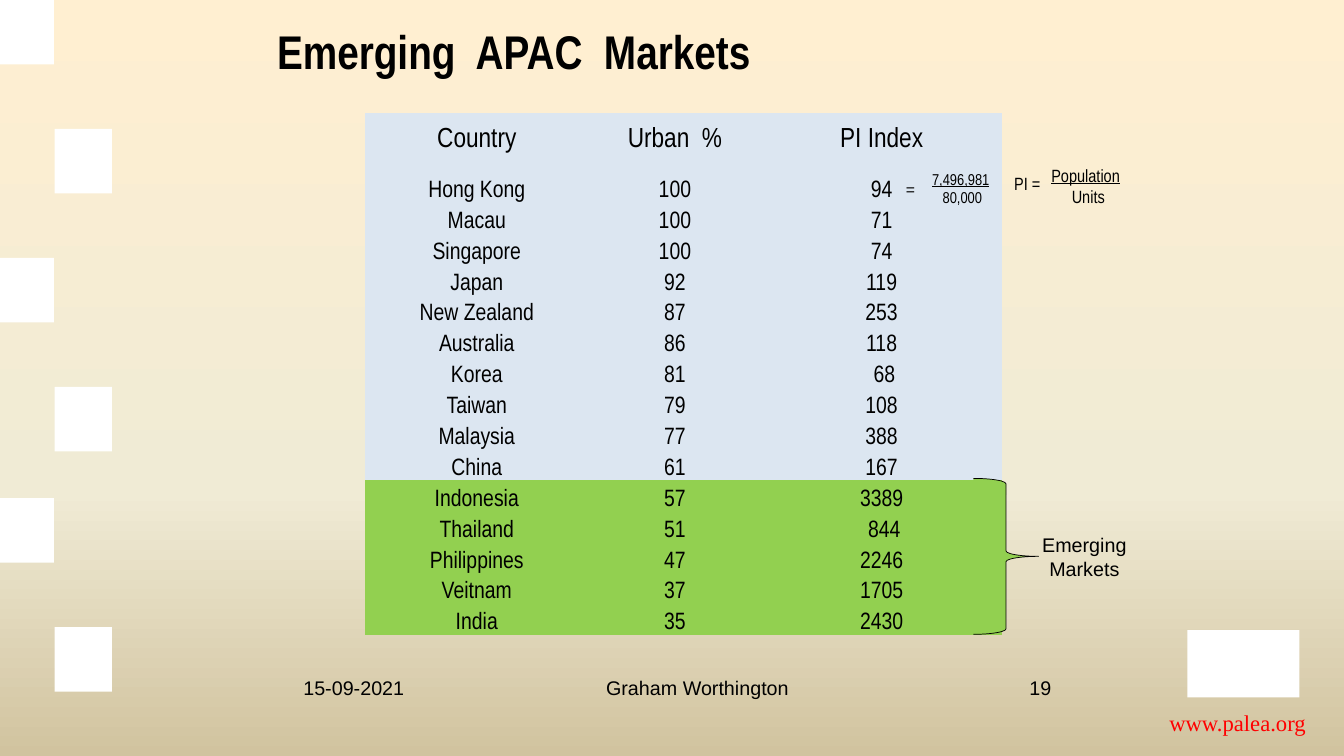
from copy import deepcopy

from lxml.etree import SubElement
from pptx import Presentation
from pptx.dml.color import RGBColor
from pptx.enum.shapes import MSO_SHAPE as SHAPE
from pptx.enum.text import MSO_ANCHOR as ANCHOR, PP_ALIGN as ALIGN
from pptx.oxml.ns import qn
from pptx.util import Pt

NARROW, SANS, SERIF = "Arial Narrow", "Arial", "Times New Roman"
BLUE, GREEN, WHITE, BLACK = "DCE6F1", "92D050", "FFFFFF", "000000"
NO_STYLE = "{2D5ABB26-0587-4C30-8999-92F81FD0307C}"

HEADERS = ("Country", "Urban  %", "PI Index")
MARKETS = [
    ("Hong Kong", 100, 94),
    ("Macau", 100, 71),
    ("Singapore", 100, 74),
    ("Japan", 92, 119),
    ("New Zealand", 87, 253),
    ("Australia", 86, 118),
    ("Korea", 81, 68),
    ("Taiwan", 79, 108),
    ("Malaysia", 77, 388),
    ("China", 61, 167),
    ("Indonesia", 57, 3389),
    ("Thailand", 51, 844),
    ("Philippines", 47, 2246),
    ("Veitnam", 37, 1705),
    ("India", 35, 2430),
]
EMERGING = {"Indonesia", "Thailand", "Philippines", "Veitnam", "India"}
NUDGED = {"Korea", "Thailand"}  # index sits slightly right of centre


def rgb(color):
    return RGBColor.from_string(color)


def set_font(p, name, size, color=BLACK, bold=False):
    f = p.font
    f.name, f.size, f.bold = name, Pt(size), bold
    f.color.rgb = rgb(color)


def add_text(slide, box, text, name, size, color=BLACK, align=ALIGN.LEFT,
             bold=False, wrap=True, tabs=()):
    sp = slide.shapes.add_textbox(*map(Pt, box))
    tf = sp.text_frame
    tf.word_wrap = wrap
    p = tf.paragraphs[0]
    p.add_run().text = text
    p.alignment = align
    if tabs:
        stops = SubElement(p._p.get_or_add_pPr(), qn("a:tabLst"))
        for pos in tabs:
            SubElement(stops, qn("a:tab"), pos=str(Pt(pos)), algn="l")
    set_font(p, name, size, color, bold)
    return tf


def add_fraction(slide, box, top, bottom, size, indent):
    tf = add_text(slide, box, top, NARROW, size)
    tf.paragraphs[0].runs[0].font.underline = True
    p = tf.add_paragraph()
    p.add_run().text = bottom
    p._p.get_or_add_pPr().set("marL", str(Pt(indent)))
    set_font(p, NARROW, size)


def add_shape(slide, kind, box, fill, line=None):
    sp = slide.shapes.add_shape(kind, *map(Pt, box))
    sp.shadow.inherit = False
    sp.fill.solid()
    sp.fill.fore_color.rgb = rgb(fill)
    if line:
        sp.line.color.rgb = rgb(line)
        sp.line.width = Pt(0.75)
    else:
        sp.line.fill.background()


def set_background(slide, stops):
    fill = slide.background.fill
    fill.gradient()
    fill.gradient_angle = 270
    stop_list = slide._element.find(".//" + qn("a:gsLst"))
    stop_list.append(deepcopy(stop_list[-1]))
    for stop, (position, color) in zip(fill.gradient_stops, stops):
        stop.position = position
        stop.color.rgb = rgb(color)


def fill_cell(cell, text, size, fill, left=0.7):
    cell.fill.solid()
    cell.fill.fore_color.rgb = rgb(fill)
    cell.vertical_anchor = ANCHOR.BOTTOM
    cell.margin_left, cell.margin_right = Pt(left), Pt(0.7)
    cell.margin_top, cell.margin_bottom = Pt(0.7), 0
    p = cell.text_frame.paragraphs[0]
    p.alignment = ALIGN.CENTER
    if text == "":
        SubElement(p._p, qn("a:endParaRPr"), sz=str(size * 100))
        return
    p.add_run().text = str(text)
    set_font(p, NARROW, size)


def add_market_table(slide):
    rows = [HEADERS, ("", "", "")] + MARKETS
    heights = [40.3, 18.7] + [31.4] * len(MARKETS)
    widths = [226.8, 175.7, 244.1]
    frame = slide.shapes.add_table(len(rows), len(widths), Pt(370.8), Pt(115.2),
                                   Pt(sum(widths)), Pt(sum(heights)))
    table = frame.table
    table.first_row = table.horz_banding = False
    table._tbl.find(".//" + qn("a:tableStyleId")).text = NO_STYLE
    for col, width in zip(table.columns, widths):
        col.width = Pt(width)
    for r, (values, height) in enumerate(zip(rows, heights)):
        table.rows[r].height = Pt(height)
        size = (28, 8)[r] if r < 2 else 24
        fill = GREEN if values[0] in EMERGING else BLUE
        for c, value in enumerate(values):
            left = 6.2 if c == 2 and values[0] in NUDGED else 0.7
            fill_cell(table.cell(r, c), value, size, fill, left)


def main():
    prs = Presentation()
    prs.slide_width, prs.slide_height = Pt(1365), Pt(768)
    slide = prs.slides.add_slide(prs.slide_layouts[6])

    # Background, side squares and web address
    set_background(slide, [(0, "FFEFD1"), (0.65, "F0EBD5"), (1, "D1C39F")])
    add_shape(slide, SHAPE.RECTANGLE, (1206, 640, 113.8, 68.4), WHITE)
    add_text(slide, (1149, 717, 216, 35.3), "www.palea.org", SERIF, 23,
             "FF0000", ALIGN.CENTER)
    for i, top in enumerate((0, 131, 262, 393, 506, 637)):
        left, width = ((0, 54.7), (55.4, 58.3))[i % 2]
        add_shape(slide, SHAPE.RECTANGLE, (left, top, width, 65.5), WHITE)

    # Title and footer
    title = add_text(slide, (271.4, -13, 921.6, 128.2),
                     "Emerging  APAC  Markets", NARROW, 48, bold=True)
    title.vertical_anchor = ANCHOR.MIDDLE
    title.margin_left = title.margin_right = Pt(10)
    title.margin_top = title.margin_bottom = Pt(5)
    add_text(slide, (301, 682.6, 822, 31.7), "15-09-2021\tGraham Worthington\t19",
             SANS, 20, tabs=(307.5, 737.5))

    # Market table with its emerging group
    add_market_table(slide)
    add_text(slide, (1046.2, 537.8, 110.2, 55.4), "Emerging Markets", SANS, 20,
             align=ALIGN.CENTER)
    add_shape(slide, SHAPE.RIGHT_BRACE, (988.6, 486, 66.2, 158.4), GREEN, BLACK)

    # PI formula
    add_text(slide, (1023, 172, 178.6, 28.8), "PI =", NARROW, 18)
    add_fraction(slide, (1060.6, 163.4, 130.3, 51), "Population", "Units", 18, 20.8)
    add_fraction(slide, (939.6, 168.5, 110.2, 46), "7,496,981", "80,000", 16, 10.7)
    add_text(slide, (913, 178.6, 23.8, 26.6), "=", SANS, 16, wrap=False)

    prs.save("out.pptx")


if __name__ == "__main__":
    main()
